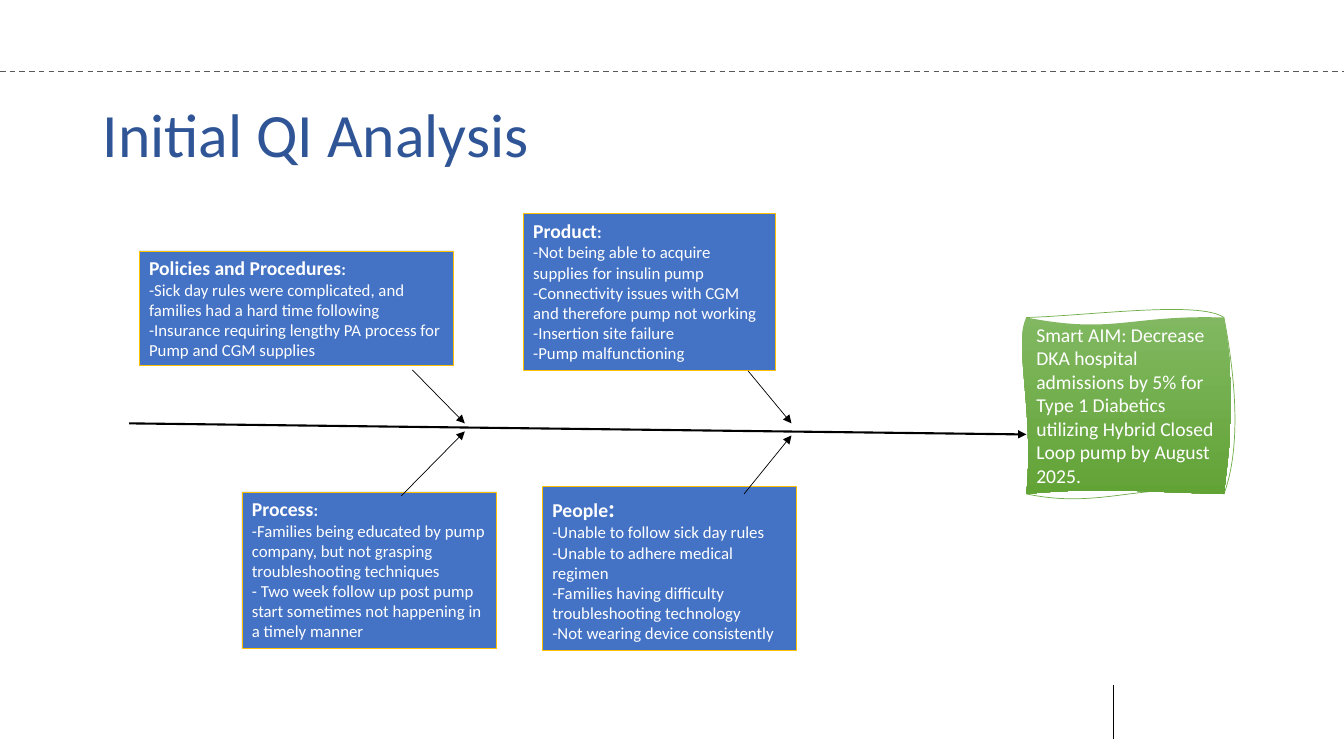
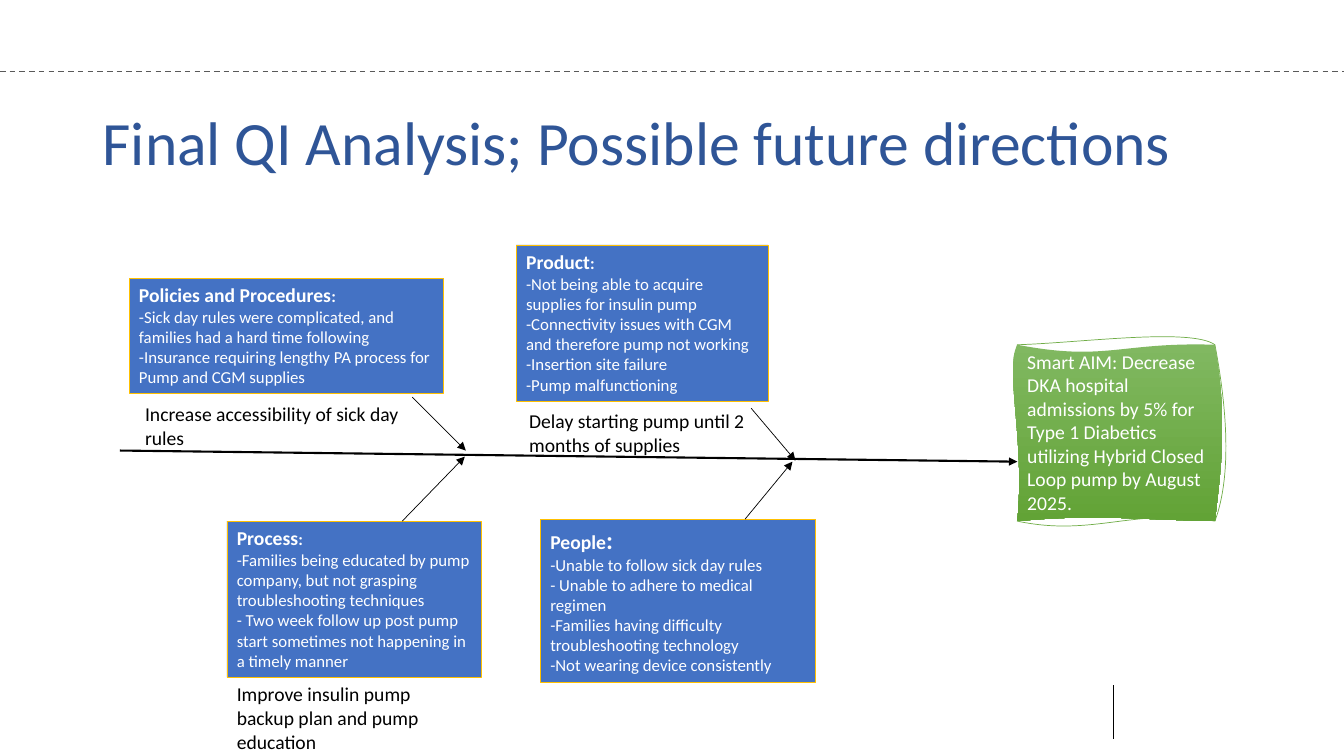
"""Build two fishbone slides of a quality improvement analysis."""
import dataclasses

import pptx
import pptx.dml.color
import pptx.enum.dml
import pptx.enum.shapes
import pptx.enum.text
import pptx.oxml
import pptx.oxml.ns
import pptx.util

Inches = pptx.util.Inches
Pt = pptx.util.Pt
Color = pptx.dml.color.RGBColor.from_string


@dataclasses.dataclass(frozen=True)
class Theme:
    font: str = "Calibri"
    title: object = Color("2F5597")
    box: object = Color("4472C4")
    edge: object = Color("FFC000")
    light: object = Color("81B861")
    dark: object = Color("62A336")
    rim: object = Color("70AD47")
    rule: object = Color("595959")
    black: object = Color("000000")
    white: object = Color("FFFFFF")
    large: int = 44
    body: int = 14
    small: int = 12


theme = Theme()
space = pptx.oxml.ns.nsdecls("a")


def write(frame, lines, size, color):
    """Fill a frame with left-aligned paragraphs and return them."""
    frame.word_wrap = True
    frame.auto_size = pptx.enum.text.MSO_AUTO_SIZE.SHAPE_TO_FIT_TEXT
    frame.vertical_anchor = pptx.enum.text.MSO_ANCHOR.TOP
    for index, line in enumerate(lines):
        para = frame.paragraphs[0] if index == 0 else frame.add_paragraph()
        para.alignment = pptx.enum.text.PP_ALIGN.LEFT
        para.text = line
        para.font.name = theme.font
        para.font.size = Pt(size)
        para.font.color.rgb = color
    return frame.paragraphs


def link(slide, ends, width, color=theme.black, arrow=False):
    """Draw a straight line, with an arrowhead at its end if asked."""
    line = slide.shapes.add_connector(
        pptx.enum.shapes.MSO_CONNECTOR.STRAIGHT, *map(Inches, ends))
    line.line.width = Pt(width)
    line.line.color.rgb = color
    props = line._element.spPr
    if arrow:
        head = pptx.oxml.parse_xml(f'<a:tailEnd {space} type="triangle"/>')
        props.find(pptx.oxml.ns.qn("a:ln")).append(head)
    props.append(pptx.oxml.parse_xml(f"<a:effectLst {space}/>"))
    return line


aim = ("Smart AIM: Decrease DKA hospital admissions by 5% for Type 1 "
       "Diabetics utilizing Hybrid Closed Loop pump by August 2025.")
policy = ["-Sick day rules were complicated, and families had a hard time following",
          "-Insurance requiring lengthy PA process for Pump and CGM supplies"]
product = ["-Not being able to acquire supplies for insulin pump",
           "-Connectivity issues with CGM and therefore pump not working",
           "-Insertion site failure",
           "-Pump malfunctioning"]
process = ["-Families being educated by pump company, but not grasping "
           "troubleshooting techniques",
           "- Two week follow up post pump start sometimes not happening "
           "in a timely manner"]
people = ["-Unable to follow sick day rules",
          "-Unable to adhere medical regimen",
          "-Families having difficulty troubleshooting technology",
          "-Not wearing device consistently"]
adhere = "- Unable to adhere to medical regimen"
revised = [people[0], adhere, *people[2:]]

pages = [
    {"title": "Initial QI Analysis", "top": 0.67, "shift": (0, 0),
     "boxes": [
         ("Policies and Procedures", 12, policy, (1.38, 2.49, 3.12, 1.14)),
         ("Product", 12, product, (5.19, 2.12, 2.5, 1.55)),
         ("People", 18, people, (5.38, 4.83, 2.52, 1.62)),
         ("Process", 12, process, (2.4, 4.88, 2.52, 1.55))],
     "bones": [(4.09, 3.67, 4.61, 4.2), (7.42, 3.68, 7.85, 4.2),
               (3.98, 4.92, 4.61, 4.28), (7.38, 4.9, 7.85, 4.32)],
     "notes": []},
    {"title": "Final QI Analysis; Possible future directions",
     "top": 0.75, "shift": (-0.09, 0.27),
     "boxes": [
         ("Policies and Procedures", 12, policy, (1.28, 2.76, 3.12, 1.14)),
         ("Product", 12, product, (5.12, 2.43, 2.5, 1.55)),
         ("Process", 12, process, (2.25, 5.17, 2.52, 1.55)),
         ("People", 18, revised, (5.36, 5.15, 2.73, 1.62))],
     "bones": [(4.09, 3.94, 4.62, 4.47), (7.45, 4.05, 7.89, 4.57),
               (3.99, 5.17, 4.61, 4.53), (7.39, 5.15, 7.86, 4.58)],
     "notes": [
         ("Delay starting pump until 2 months of supplies", (5.15, 4.01, 2.4, 1.28)),
         ("Increase accessibility of sick day rules", (1.34, 3.94, 3.12, 1.28)),
         ("Improve insulin pump backup plan and pump education",
          (2.25, 6.72, 2.52, 1.51))]},
]

wide, high = 196, 175
corners = [(0, 0), (wide, 0), (wide, high), (0, high)]
rim_bends = [((64, -2), (172, -17)), ((212, 84), (209, 140)),
             ((116, 161), (76, 191)), ((15, 151), (-3, 27))]
fill_bends = [((88, 17), (102, -3)), ((209, 77), (202, 122)),
              ((108, 173), (75, 168)), ((8, 95), (-13, 24))]
curves = ""
for bends, paint in ((rim_bends, 'fill="none"'), (fill_bends, 'stroke="0"')):
    curves += (f'<a:path w="{wide}" h="{high}" {paint}>'
               '<a:moveTo><a:pt x="0" y="0"/></a:moveTo>')
    for side, (near, far) in enumerate(bends):
        points = (near, far, corners[(side + 1) % 4])
        marks = "".join(f'<a:pt x="{x}" y="{y}"/>' for x, y in points)
        curves += f"<a:cubicBezTo>{marks}</a:cubicBezTo>"
    curves += "<a:close/></a:path>"
outline = f"<a:pathLst {space}>{curves}</a:pathLst>"

deck = pptx.Presentation()
deck.slide_width = Inches(13.33)
deck.slide_height = Inches(7.5)

for page in pages:
    slide = deck.slides.add_slide(deck.slide_layouts[6])
    right, down = page["shift"]

    rule = link(slide, (0, 0.71, 13.33, 0.71), 1, theme.rule)
    rule.line.dash_style = pptx.enum.dml.MSO_LINE.DASH
    link(slide, (11.04, 6.8, 11.04, 7.33), 0.75)

    frame = slide.shapes.add_textbox(
        *map(Inches, (0.92, page["top"], 11.5, 1.45))).text_frame
    para = write(frame, [page["title"]], theme.large, theme.title)[0]
    para.line_spacing = 0.75
    frame.auto_size = pptx.enum.text.MSO_AUTO_SIZE.NONE
    frame.vertical_anchor = pptx.enum.text.MSO_ANCHOR.MIDDLE

    link(slide, (1.28 + right, 4.2 + down, 10.18 + right, 4.31 + down),
         1.5, arrow=True)

    form = slide.shapes.build_freeform(scale=Inches(0.01))
    form.add_line_segments(corners[1:], close=True)
    scroll = form.convert_to_shape(Inches(10.18 + right), Inches(3.15 + down))
    straight = scroll._element.spPr.find(".//" + pptx.oxml.ns.qn("a:pathLst"))
    straight.getparent().replace(straight, pptx.oxml.parse_xml(outline))
    scroll.shadow.inherit = False
    scroll.fill.gradient()
    scroll.fill.gradient_angle = 270
    for stop, color in zip(scroll.fill.gradient_stops, (theme.light, theme.dark)):
        stop.color.rgb = color
    scroll.line.color.rgb = theme.rim
    scroll.line.width = Pt(0.5)
    write(scroll.text_frame, [aim], theme.body, theme.white)

    for head, size, lines, place in page["boxes"]:
        box = slide.shapes.add_shape(
            pptx.enum.shapes.MSO_SHAPE.RECTANGLE, *map(Inches, place))
        box.shadow.inherit = False
        box.fill.solid()
        box.fill.fore_color.rgb = theme.box
        box.line.color.rgb = theme.edge
        box.line.width = Pt(0.5)
        para = write(box.text_frame, [head, *lines], theme.small, theme.white)[0]
        para.font.bold = True
        para.runs[0].font.size = Pt(theme.body)
        colon = para.add_run()
        colon.text = ":"
        colon.font.size = Pt(size)

    for ends in page["bones"]:
        link(slide, ends, 0.5, arrow=True)

    for note, place in page["notes"]:
        label = slide.shapes.add_textbox(*map(Inches, place))
        write(label.text_frame, [note], theme.body, theme.black)

deck.save("out.pptx")
